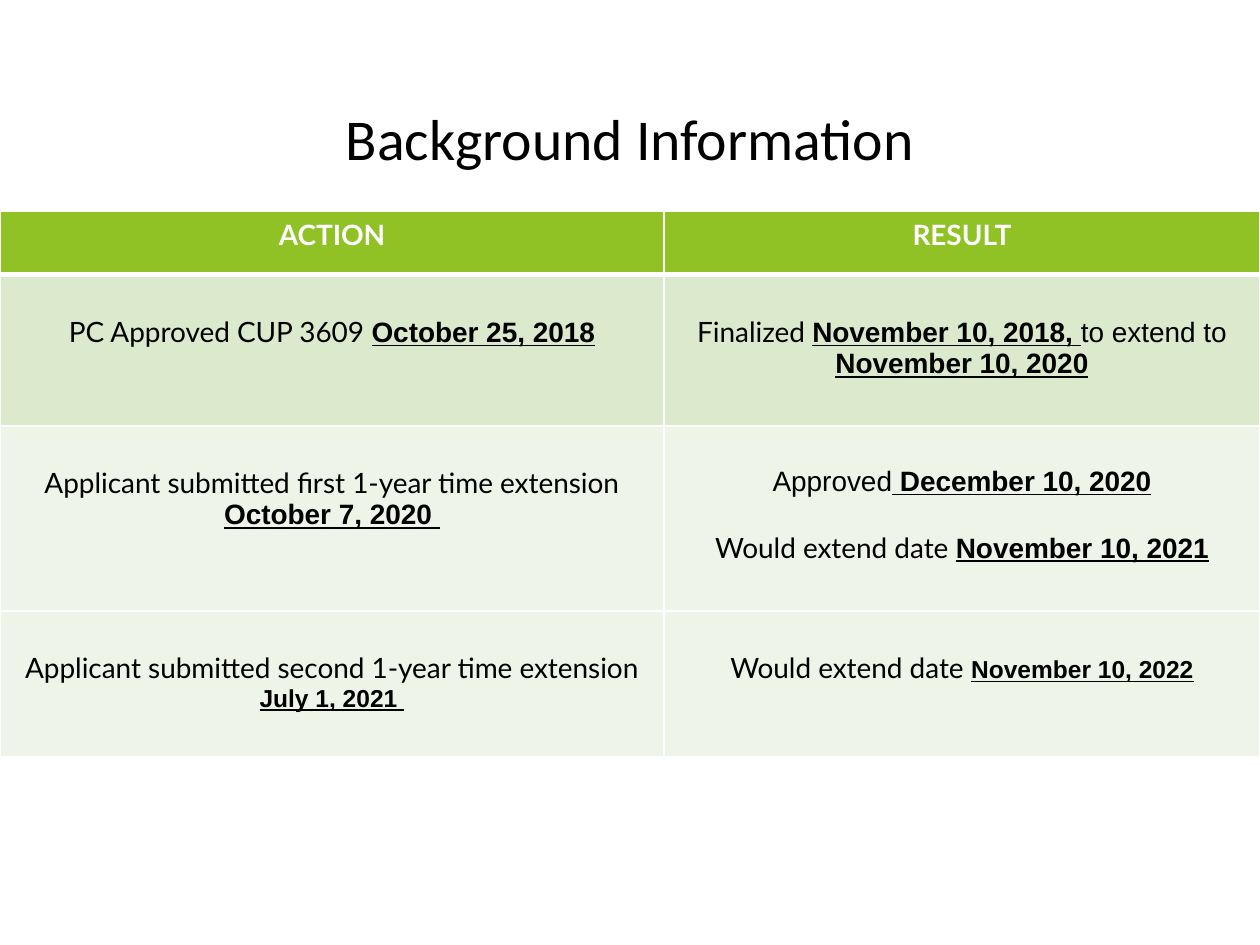
from pptx import Presentation
from pptx.util import Inches, Pt
from pptx.dml.color import RGBColor as RGB
from pptx.enum.text import PP_ALIGN as Align, MSO_ANCHOR as Anchor
from pptx.oxml import parse_xml
from pptx.oxml.ns import nsdecls

COLORS = {"white": "FFFFFF", "black": "000000", "green": "90C226",
          "mid": "DBE9CD", "pale": "EEF4E8"}
STYLES = {
    "title": dict(name="Calibri", size=Pt(33)),
    "head": dict(name="Lato", size=Pt(16), bold=True),
    "text": dict(name="Lato", size=Pt(16), bold=False),
    "plain": dict(name="Arial", size=Pt(16), bold=False),
    "date": dict(name="Arial", size=Pt(16), bold=True, underline=True),
    "small": dict(name="Arial", size=Pt(14), bold=True, underline=True),
}


def write(para, runs, color):
    para.alignment = Align.CENTER
    for style, text in runs:
        run = para.add_run()
        run.text = text
        for key, value in STYLES[style].items():
            setattr(run.font, key, value)
        run.font.color.rgb = RGB.from_string(COLORS[color])


def border(cell, side, width):
    line = parse_xml(
        f'<a:{side} {nsdecls("a")} w="{Pt(width)}"><a:solidFill>'
        f'<a:srgbClr val="{COLORS["white"]}"/></a:solidFill></a:{side}>')
    props = cell._tc.get_or_add_tcPr()
    props.append(line)


deck = Presentation()
deck.slide_width, deck.slide_height = Inches(10), Inches(7.5)
slide = deck.slides.add_slide(deck.slide_layouts[6])

# Title
box = slide.shapes.add_textbox(Inches(0.69), Inches(0.4), Inches(8.62), Inches(1.45))
frame = box.text_frame
frame.word_wrap = True
frame.vertical_anchor = Anchor.MIDDLE
frame.paragraphs[0].line_spacing = 0.9
write(frame.paragraphs[0], [("title", "Background Information")], "black")

# Each cell is a list of paragraphs, each paragraph a list of styled runs
rows = [
    (0.5, "green", [[("head", "ACTION")]], [[("head", "RESULT")]]),
    (1.2, "mid",
     [[("text", "PC Approved CUP 3609 "), ("date", "October 25, 2018")]],
     [[("text", "Finalized "), ("date", "November 10, 2018, "),
       ("plain", "to extend to "), ("date", "November 10, 2020")]]),
    (1.47, "pale",
     [[("text", "Applicant submitted first 1-year time extension "),
       ("date", "October 7, 2020 ")]],
     [[("plain", "Approved"), ("date", " December 10, 2020")],
      [("text", "Would extend date "), ("date", "November 10, 2021")]]),
    (1.16, "pale",
     [[("text", "Applicant submitted second 1-year time extension "),
       ("small", "July 1, 2021 ")]],
     [[("text", "Would extend date "), ("small", "November 10, 2022")]]),
]
widths = [5.27, 4.73]

table = slide.shapes.add_table(len(rows), len(widths), Inches(0), Inches(1.68),
                               Inches(10), Inches(4.33)).table
for col, width in zip(table.columns, widths):
    col.width = Inches(width)

for r, (height, fill, *cells) in enumerate(rows):
    table.rows[r].height = Inches(height)
    for c, paras in enumerate(cells):
        cell = table.cell(r, c)
        cell.margin_top = Inches(0.32 if r else 0.05)
        for side in ("lnL", "lnR", "lnT", "lnB"):
            thick = (r, side) in ((0, "lnB"), (1, "lnT"))
            border(cell, side, 3 if thick else 1)
        cell.fill.solid()
        cell.fill.fore_color.rgb = RGB.from_string(COLORS[fill])
        text = cell.text_frame
        for i, runs in enumerate(paras):
            para = text.add_paragraph() if i else text.paragraphs[0]
            if i:
                para.space_before = Pt(19)
            write(para, runs, "black" if r else "white")

deck.save("out.pptx")
